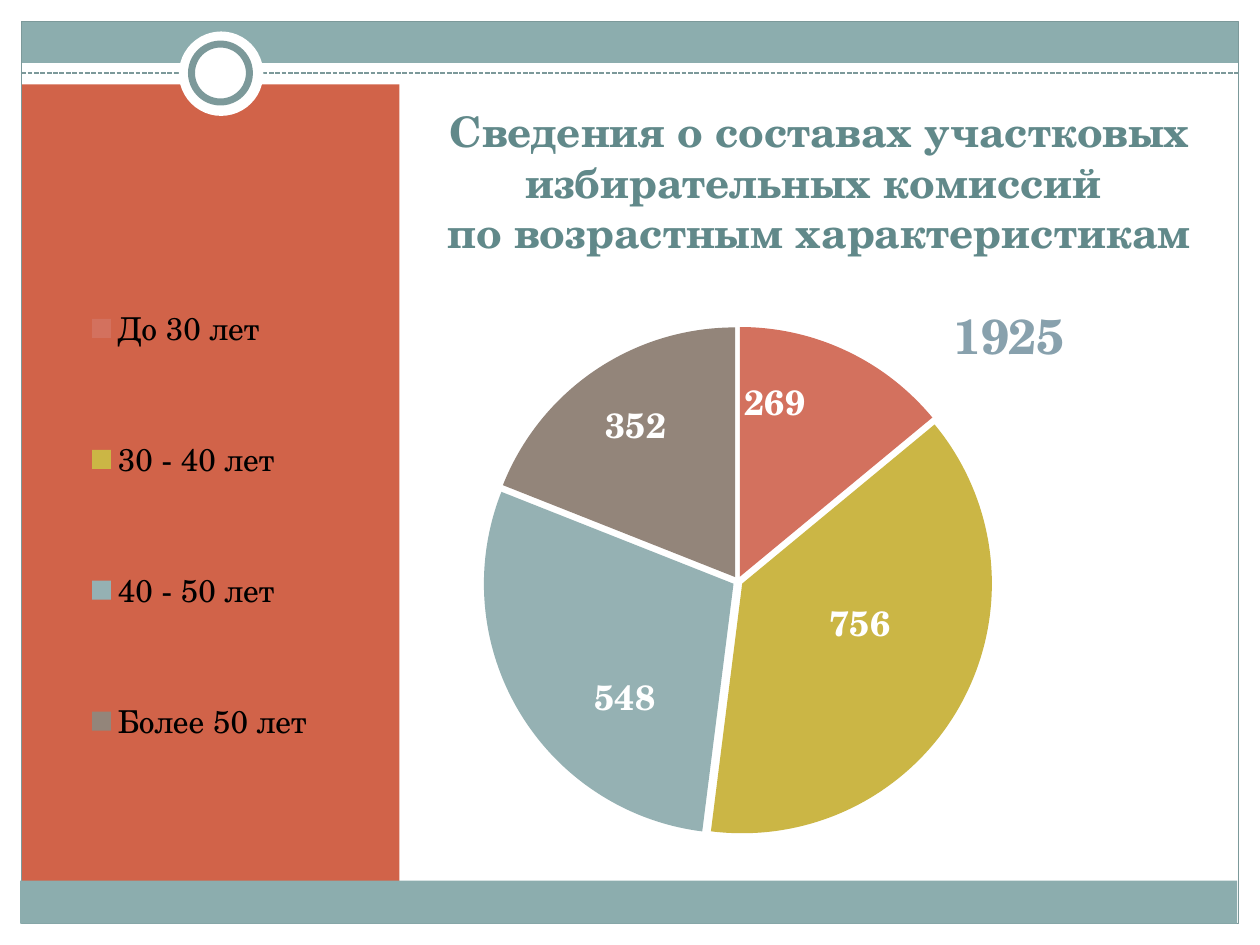
from lxml import etree
from pptx import Presentation
from pptx.chart.data import CategoryChartData
from pptx.dml.color import RGBColor
from pptx.enum.chart import XL_CHART_TYPE, XL_LABEL_POSITION, XL_LEGEND_POSITION
from pptx.enum.dml import MSO_LINE
from pptx.enum.shapes import MSO_CONNECTOR, MSO_SHAPE
from pptx.enum.text import MSO_ANCHOR, PP_ALIGN
from pptx.oxml.ns import qn
from pptx.util import Inches, Pt

RECTANGLE, OVAL = MSO_SHAPE.RECTANGLE, MSO_SHAPE.OVAL
STRAIGHT = MSO_CONNECTOR.STRAIGHT
DASHED = MSO_LINE.SQUARE_DOT
CENTER, BOTTOM = PP_ALIGN.CENTER, MSO_ANCHOR.BOTTOM
PIE = XL_CHART_TYPE.PIE
LABEL_CENTER, LEGEND_RIGHT = XL_LABEL_POSITION.CENTER, XL_LEGEND_POSITION.RIGHT

FONT = "TeX Gyre Schola"
WHITE, TEAL, DARK_TEAL, ORANGE = "FFFFFF", "8CADAE", "7C999A", "D16349"

# Age group, share in percent, members, slice colour, label shift
AGE_GROUPS = [
    ("До 30 лет", 14, "269", "D3715E", (-0.015, -0.094)),
    ("30 - 40 лет", 38, "756", "CBB645", (0.007, -0.033)),
    ("40 - 50 лет", 29, "548", "95B1B3", (-0.001, 0.074)),
    ("Более 50 лет", 19, "352", "93857A", (-0.024, -0.075)),
]


def color(value):
    return RGBColor.from_string(value)


def style_font(font, size, value, bold=False):
    font.name = FONT
    font.size = Pt(size)
    font.bold = bold
    font.color.rgb = color(value)


def add_panel(page, kind, bounds, fill=None, line=None, width=0.75):
    panel = page.shapes.add_shape(kind, *map(Inches, bounds))
    panel.shadow.inherit = False
    if fill:
        panel.fill.solid()
        panel.fill.fore_color.rgb = color(fill)
    else:
        panel.fill.background()
    if line:
        panel.line.color.rgb = color(line)
        panel.line.width = Pt(width)
    else:
        panel.line.fill.background()


def add_dashed_rule(page, left, right, y):
    rule = page.shapes.add_connector(
        STRAIGHT, Inches(left), Inches(y), Inches(right), Inches(y))
    rule.line.color.rgb = color(DARK_TEAL)
    rule.line.width = Pt(0.9)
    rule.line.dash_style = DASHED
    etree.SubElement(rule._element.spPr, qn("a:effectLst"))


def add_heading(page, text, bounds):
    box = page.shapes.add_textbox(*map(Inches, bounds))
    frame = box.text_frame
    frame.word_wrap = True
    frame.vertical_anchor = BOTTOM
    frame.text = text
    para = frame.paragraphs[0]
    para.alignment = CENTER
    for span in para.runs:
        style_font(span.font, 24, "61898A", True)


def place(element, index, **settings):
    """Give a chart part a manual layout, as its child number index."""
    previous = element.find(qn("c:layout"))
    if previous is not None:
        element.remove(previous)
    layout = etree.Element(qn("c:layout"))
    manual = etree.SubElement(layout, qn("c:manualLayout"))
    for name, value in settings.items():
        etree.SubElement(manual, qn("c:" + name)).set("val", str(value))
    element.insert(index, layout)


def add_age_chart(page, bounds):
    data = CategoryChartData()
    data.categories = [group[0] for group in AGE_GROUPS]
    data.add_series("Series 1", [group[1] for group in AGE_GROUPS])
    chart = page.shapes.add_chart(PIE, *map(Inches, bounds), data).chart
    style_font(chart.font, 18, "000000")

    # Total as the chart title
    chart.has_title = True
    frame = chart.chart_title.text_frame
    frame.text = "1925"
    style_font(frame.paragraphs[0].runs[0].font, 28, "88A1AD", True)
    place(chart.chart_title._element, 1,
          xMode="edge", yMode="edge", x=0.774, y=0.095)

    # Legend over the orange panel
    chart.has_legend = True
    legend = chart.legend
    legend.position = LEGEND_RIGHT
    legend.include_in_layout = False
    style_font(legend.font, 18, "000000")
    place(legend._element, 1, xMode="edge", yMode="edge",
          x=0.052, y=0, w=0.21, h=0.92)

    # Slices and their labels
    place(chart._chartSpace.chart.plotArea, 0, layoutTarget="inner",
          xMode="edge", yMode="edge", x=0.392, y=0.16, w=0.422, h=0.771)
    plot = chart.plots[0]
    plot.vary_by_categories = True
    series = plot.series[0]
    explosion = etree.Element(qn("c:explosion"))
    explosion.set("val", "2")
    series._element.find(qn("c:tx")).addnext(explosion)
    for index, (_, _, members, fill, (x, y)) in enumerate(AGE_GROUPS):
        point = series.points[index]
        point.format.fill.solid()
        point.format.fill.fore_color.rgb = color(fill)
        label = point.data_label
        label.text_frame.text = members
        style_font(label.text_frame.paragraphs[0].runs[0].font, 20, WHITE, True)
        label.position = LABEL_CENTER
        entry = series._element.find(qn("c:dLbls")).findall(qn("c:dLbl"))[index]
        place(entry, 1, x=x, y=y)


def main():
    deck = Presentation()
    deck.slide_width, deck.slide_height = Inches(10), Inches(7.5)
    page = deck.slides.add_slide(deck.slide_layouts[6])

    # Top band, white margins and side panel
    add_panel(page, RECTANGLE, (0.17, 0.17, 9.66, 0.33), TEAL)
    for margin in [(0, 7.33, 10, 0.17), (9.83, 0, 0.17, 7.5),
                   (0, 0, 10, 0.13), (0, 0, 0.17, 7.5)]:
        add_panel(page, RECTANGLE, margin, WHITE)
    add_panel(page, RECTANGLE, (0.17, 0.67, 3, 6.42), ORANGE)

    # Frame, dashed rule, ring and bottom band
    add_panel(page, RECTANGLE, (0.17, 0.17, 9.66, 7.16), line=DARK_TEAL)
    add_dashed_rule(page, 0.17, 9.83, 0.58)
    add_panel(page, OVAL, (1.42, 0.25, 0.67, 0.67), WHITE)
    add_panel(page, OVAL, (1.52, 0.35, 0.46, 0.46), WHITE, DARK_TEAL, 4)
    add_panel(page, RECTANGLE, (0.16, 6.99, 9.66, 0.34), TEAL)

    # Content
    add_heading(page, "Сведения о составах участковых избирательных комиссий "
                "\vпо возрастным характеристикам", (3.42, 0.67, 6.17, 1.42))
    add_age_chart(page, (0.08, 1.75, 9.58, 5.25))
    deck.save("out.pptx")


if __name__ == "__main__":
    main()
